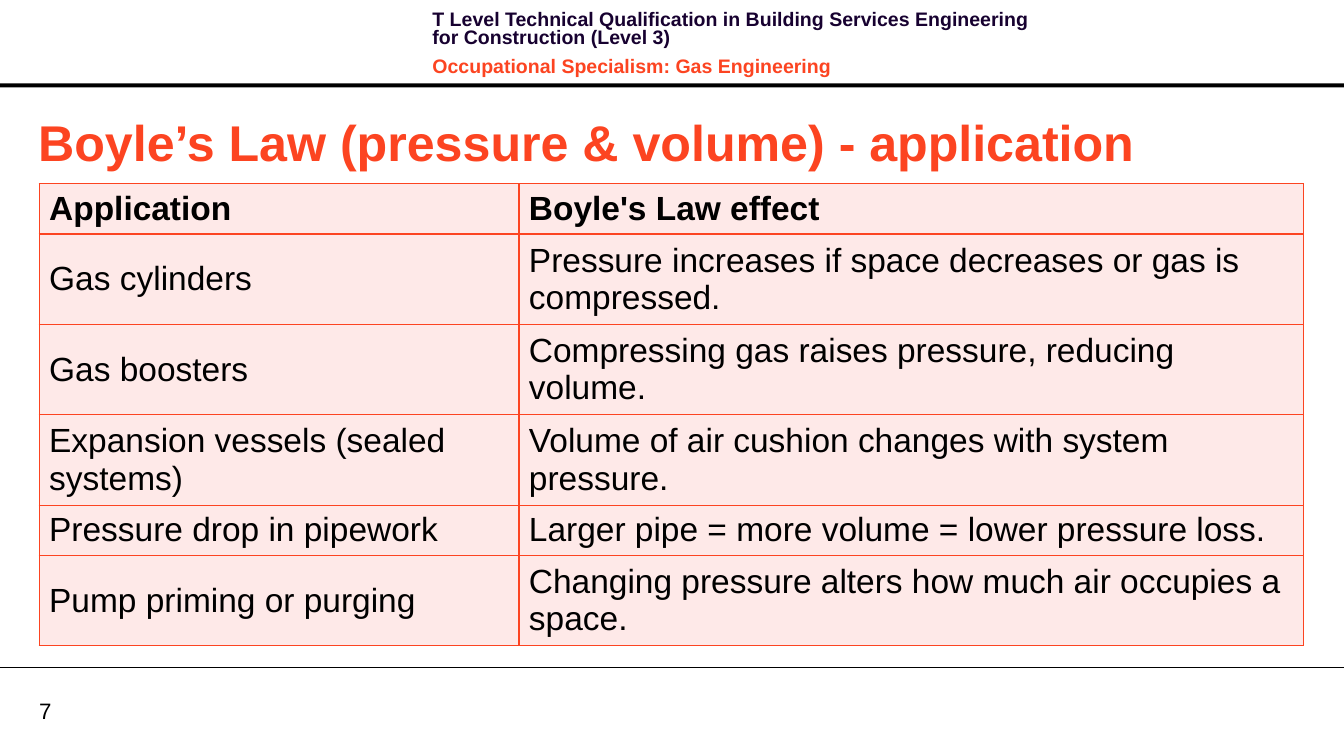
import pptx
import pptx.dml.color
import pptx.enum.shapes
import pptx.enum.text
import pptx.oxml
import pptx.oxml.ns
import pptx.util

RGB = pptx.dml.color.RGBColor
ORANGE = RGB(0xFC, 0x44, 0x21)
NAVY = RGB(0x17, 0x01, 0x30)
BLACK = RGB(0, 0, 0)
PINK = RGB(0xFE, 0xE9, 0xE8)
MIDDLE = pptx.enum.text.MSO_ANCHOR.MIDDLE
TOP = pptx.enum.text.MSO_ANCHOR.TOP
NS = pptx.oxml.ns.nsdecls("a")

HEAD = [
    ("T Level Technical Qualification in Building Services Engineering "
     "for Construction (Level 3)", NAVY),
    ("Occupational Specialism: Gas Engineering", ORANGE),
]
ROWS = [
    ("Application", "Boyle's Law effect"),
    ("Gas cylinders",
     "Pressure increases if space decreases or gas is compressed."),
    ("Gas boosters", "Compressing gas raises pressure, reducing volume."),
    ("Expansion vessels (sealed systems)",
     "Volume of air cushion changes with system pressure."),
    ("Pressure drop in pipework",
     "Larger pipe = more volume = lower pressure loss."),
    ("Pump priming or purging",
     "Changing pressure alters how much air occupies a space."),
]
COLS = [478, 782]
HEIGHTS = [47, 84, 84, 84, 47, 84]


def px(*lengths):
    """Turn px, 100 to the inch, into EMU."""
    return [pptx.util.Emu(length * 9144) for length in lengths]


class Page:
    font = "Arial"

    def __init__(self, deck):
        self.slide = deck.slides.add_slide(deck.slide_layouts[5])
        self.shapes = self.slide.shapes

    def style(self, para, size, color, bold=False):
        para.font.name = self.font
        para.font.size = pptx.util.Pt(size)
        para.font.bold = bold
        para.font.color.rgb = color
        para.alignment = pptx.enum.text.PP_ALIGN.LEFT

    def title(self, text, box):
        shape = self.shapes.title
        shape.left, shape.top, shape.width, shape.height = px(*box)
        frame = shape.text_frame
        frame.text = text
        frame.word_wrap = True
        frame.auto_size = pptx.enum.text.MSO_AUTO_SIZE.NONE
        frame.vertical_anchor = MIDDLE
        self.style(frame.paragraphs[0], 36, ORANGE, True)

    def text(self, lines, box, size, bold=False, pitch=None, gap=0,
             inset=None, anchor=TOP):
        """Add a box with one paragraph for each (text, color) line."""
        frame = self.shapes.add_textbox(*px(*box)).text_frame
        frame.word_wrap = True
        frame.vertical_anchor = anchor
        if inset is not None:
            frame.margin_left = frame.margin_right = inset
            frame.margin_top = frame.margin_bottom = inset
        for i, (words, color) in enumerate(lines):
            para = frame.add_paragraph() if i else frame.paragraphs[0]
            para.text = words
            self.style(para, size, color, bold)
            if pitch:
                para.line_spacing = pptx.util.Pt(pitch)
            if i:
                para.space_before = pptx.util.Pt(gap)
            para.space_after = pptx.util.Pt(gap)

    def bar(self, box, color):
        kind = pptx.enum.shapes.MSO_SHAPE.RECTANGLE
        shape = self.shapes.add_shape(kind, *px(*box))
        shape.shadow.inherit = False
        shape.fill.solid()
        shape.fill.fore_color.rgb = color
        shape.line.fill.background()

    def line(self, ends, color, width):
        kind = pptx.enum.shapes.MSO_CONNECTOR.STRAIGHT
        rule = self.shapes.add_connector(kind, *px(*ends))
        rule.line.color.rgb = color
        rule.line.width = pptx.util.Pt(width)
        props = rule.element.spPr
        props.append(pptx.oxml.parse_xml(f"<a:effectLst {NS}/>"))

    def border(self, cell, color):
        props = cell._tc.get_or_add_tcPr()
        for i, side in enumerate("LRTB"):
            props.insert(i, pptx.oxml.parse_xml(
                f'<a:ln{side} {NS} w="12700"><a:solidFill>'
                f'<a:srgbClr val="{color}"/></a:solidFill></a:ln{side}>'))

    def table(self, rows, left, top, cols, heights):
        box = px(left, top, sum(cols), sum(heights))
        grid = self.shapes.add_table(len(rows), len(cols), *box).table
        grid.horz_banding = False
        for col, width in zip(grid.columns, px(*cols)):
            col.width = width
        for r, (row, height) in enumerate(zip(rows, px(*heights))):
            grid.rows[r].height = height
            for c, words in enumerate(row):
                cell = grid.cell(r, c)
                cell.text = words
                cell.vertical_anchor = MIDDLE
                cell.fill.solid()
                cell.fill.fore_color.rgb = PINK
                self.border(cell, ORANGE)
                para = cell.text_frame.paragraphs[0]
                self.style(para, 24, BLACK, r == 0)


def main():
    deck = pptx.Presentation()
    deck.slide_width, deck.slide_height = px(1339, 748)
    page = Page(deck)
    page.bar((0, 83, 1339, 4), BLACK)
    page.text([("7", BLACK)], (39, 694, 64, 27), 16, inset=0, anchor=MIDDLE)
    page.line((0, 665, 1339, 665), BLACK, 0.75)
    page.text(HEAD, (421, 7, 637, 64), 14, bold=True, pitch=13.1, gap=4)
    page.title("Boyle’s Law (pressure & volume) - application",
               (28, 105, 1272, 71))
    page.table(ROWS, 39, 183, COLS, HEIGHTS)
    deck.save("out.pptx")


if __name__ == "__main__":
    main()
